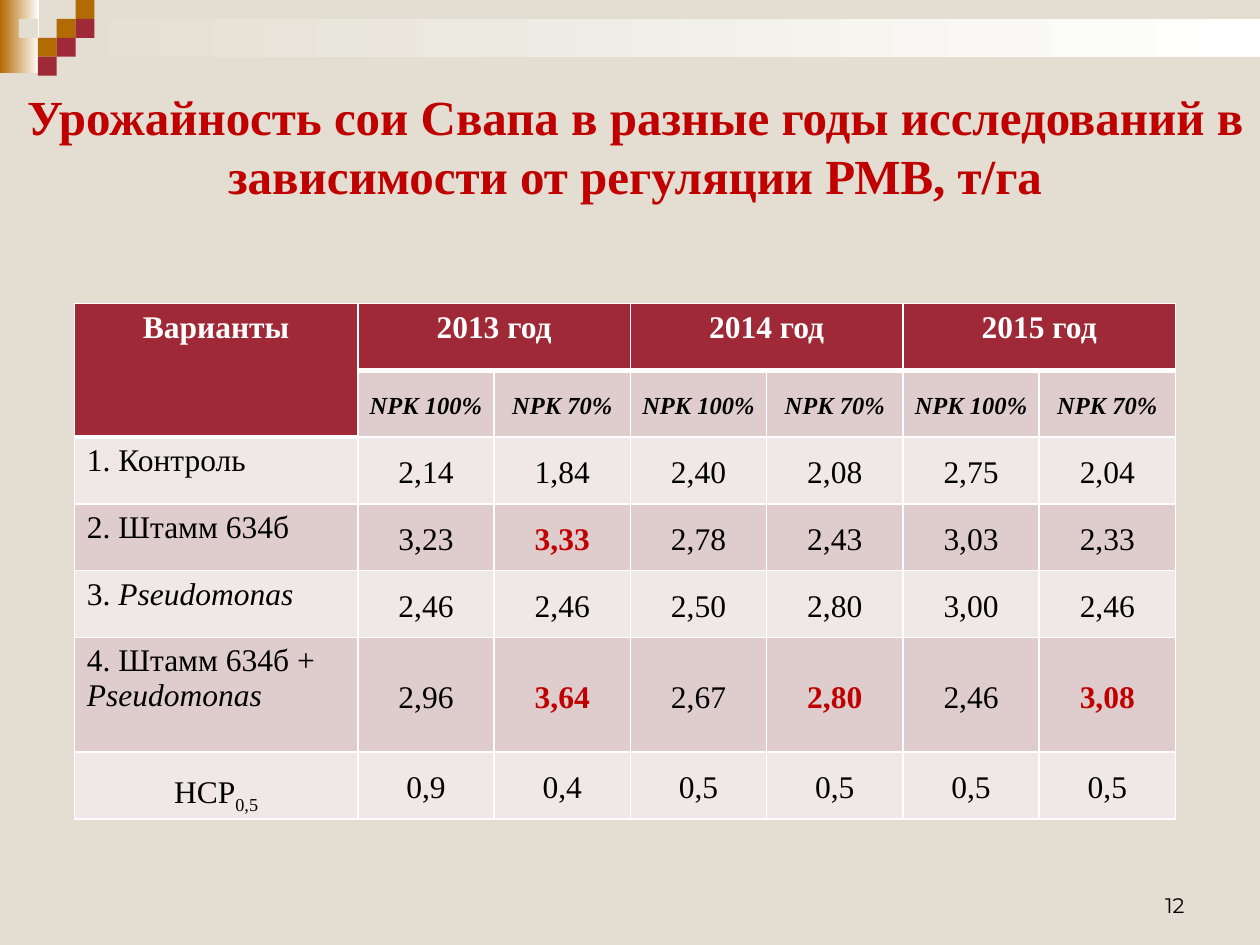
from lxml.etree import SubElement
from pptx import Presentation
from pptx.dml.color import RGBColor
from pptx.enum.shapes import MSO_SHAPE
from pptx.enum.text import MSO_ANCHOR, PP_ALIGN
from pptx.oxml.ns import qn
from pptx.util import Inches, Pt

COLORS = {
    "sand": "E3DED1", "white": "FFFFFF", "black": "000000", "ochre": "B26B02",
    "wine": "9F2936", "red": "C00000", "band_dark": "DFCDCE", "band_light": "F0E8E8",
}
SERIF = "Times New Roman"
BODY = {"name": SERIF, "size": 18, "color": "black", "bold": False, "italic": False}
HEADER = {**BODY, "color": "white", "bold": True}
SUBHEADER = {**BODY, "size": 14, "bold": True, "italic": True}
LATIN = {**BODY, "italic": True}
BEST = {**BODY, "color": "red", "bold": True}
TITLE = {**BEST, "size": 28}
NUMBER = {**BODY, "name": "Montserrat", "size": 12}

YEARS = ["2013 год", "2014 год", "2015 год"]
DOSES = ["NРK 100%", "NРK 70%"]
# Each label is a list of paragraphs, each paragraph a list of (text, format) spans.
LABELS = [
    [[("1. Контроль", BODY)]],
    [[("2. Штамм 634б", BODY)]],
    [[("3. ", BODY), ("Pseudomonas", LATIN)]],
    [[("4. Штамм 634б +", BODY)], [("Pseudomonas", LATIN)]],
    [[("НСР", BODY), ("0,5", {**BODY, "baseline": -25000})]],
]
YIELDS = [
    ["2,14", "1,84", "2,40", "2,08", "2,75", "2,04"],
    ["3,23", "3,33", "2,78", "2,43", "3,03", "2,33"],
    ["2,46", "2,46", "2,50", "2,80", "3,00", "2,46"],
    ["2,96", "3,64", "2,67", "2,80", "2,46", "3,08"],
    ["0,9", "0,4", "0,5", "0,5", "0,5", "0,5"],
]
BEST_CELLS = {(1, 1), (3, 1), (3, 3), (3, 5)}


def rgb(name):
    return RGBColor.from_string(COLORS[name])


def format_span(span, values):
    for key, value in values.items():
        if key == "color":
            span.font.color.rgb = rgb(value)
        elif key == "baseline":
            span._r.get_or_add_rPr().set("baseline", str(value))
        else:
            setattr(span.font, key, Pt(value) if key == "size" else value)


def write(frame, paragraphs, align=PP_ALIGN.LEFT, spacing=None):
    for index, spans in enumerate(paragraphs):
        para = frame.add_paragraph() if index else frame.paragraphs[0]
        para.alignment = align
        para.line_spacing = spacing
        for text, values in spans:
            span = para.add_run()
            span.text = text
            format_span(span, values)


def add_text(page, left, top, width, height, text, values, align, anchor):
    box = page.shapes.add_textbox(Inches(left), Inches(top), Inches(width), Inches(height))
    box.text_frame.word_wrap = True
    box.text_frame.vertical_anchor = anchor
    write(box.text_frame, [[(text, values)]], align)


def add_block(page, left, top, width, height, *names):
    """Borderless rectangle; two colour names give a left-to-right gradient."""
    block = page.shapes.add_shape(
        MSO_SHAPE.RECTANGLE, Inches(left), Inches(top), Inches(width), Inches(height))
    block.shadow.inherit = False
    block.line.fill.background()
    if len(names) == 1:
        block.fill.solid()
        block.fill.fore_color.rgb = rgb(names[0])
        return
    block.fill.gradient()
    block.fill.gradient_angle = 0
    for stop, name, position in zip(block.fill.gradient_stops, names, (0, 1)):
        stop.color.rgb = rgb(name)
        stop.position = position


def add_ornament(page, left, top, width):
    unit = 0.15
    add_block(page, left, top, 0.31, 0.58, "ochre", "white")
    add_block(page, left + 3 * unit, top + unit, width - 3 * unit, 2 * unit, "sand", "white")
    squares = [(3, 1, "ochre"), (4, 0, "ochre"), (4, 1, "wine"), (2, 2, "ochre"),
               (1, 1, "sand"), (3, 2, "wine"), (2, 3, "wine")]
    for column, row, name in squares:
        add_block(page, left + column * unit, top + row * unit, unit, unit, name)


def style_cell(cell, fill, bottom=1):
    properties = cell._tc.get_or_add_tcPr()
    for side, points in (("L", 1), ("R", 1), ("T", 1), ("B", bottom)):
        line = SubElement(properties, qn(f"a:ln{side}"), w=str(Pt(points)))
        color = SubElement(SubElement(line, qn("a:solidFill")), qn("a:srgbClr"))
        color.set("val", COLORS["white"])
    cell.fill.solid()
    cell.fill.fore_color.rgb = rgb(fill)


def write_centred(cell, spans, spacing=1.15):
    cell.vertical_anchor = MSO_ANCHOR.MIDDLE
    cell.margin_left = cell.margin_right = Inches(0.07)
    cell.margin_top = cell.margin_bottom = 0
    write(cell.text_frame, [spans], PP_ALIGN.CENTER, spacing)


def add_yield_table(page, left, top, width):
    heights = [0.53] * 5 + [0.91, 0.53]
    label_width = 2.25
    columns = len(YEARS) * len(DOSES)
    table = page.shapes.add_table(
        len(heights), columns + 1, Inches(left), Inches(top),
        Inches(width), Inches(sum(heights))).table
    table.first_row = table.horz_banding = False
    for row, height in zip(table.rows, heights):
        row.height = Inches(height)
    for index, column in enumerate(table.columns):
        column.width = Inches((width - label_width) / columns if index else label_width)

    for row in range(len(heights)):
        for column in range(columns + 1):
            if row == 0 or (row == 1 and column == 0):
                style_cell(table.cell(row, column), "wine", bottom=3)
            else:
                style_cell(table.cell(row, column), "band_dark" if row % 2 else "band_light")

    corner = table.cell(0, 0)
    corner.merge(table.cell(1, 0))
    write(corner.text_frame, [[("Варианты", HEADER)]], PP_ALIGN.CENTER)
    for index, year in enumerate(YEARS):
        first = 1 + index * len(DOSES)
        head = table.cell(0, first)
        head.merge(table.cell(0, first + len(DOSES) - 1))
        write(head.text_frame, [[(year, HEADER)]], PP_ALIGN.CENTER)
        for offset, dose in enumerate(DOSES):
            write_centred(table.cell(1, first + offset), [(dose, SUBHEADER)])

    for row, (label, values) in enumerate(zip(LABELS, YIELDS)):
        label_cell = table.cell(row + 2, 0)
        if label is LABELS[-1]:
            write_centred(label_cell, label[0], 1.5)
        else:
            write(label_cell.text_frame, label)
        for column, value in enumerate(values):
            values_format = BEST if (row, column) in BEST_CELLS else BODY
            write_centred(table.cell(row + 2, column + 1), [(value, values_format)])


def main():
    deck = Presentation()
    deck.slide_width, deck.slide_height = Inches(10), Inches(7.5)
    page = deck.slides.add_slide(deck.slide_layouts[6])
    page.background.fill.solid()
    page.background.fill.fore_color.rgb = rgb("sand")
    add_ornament(page, 0, 0, 10)
    add_text(page, 7.17, 6.83, 2.33, 0.5, "12", NUMBER, PP_ALIGN.RIGHT, MSO_ANCHOR.BOTTOM)
    add_yield_table(page, 0.59, 2.41, 8.74)
    add_text(page, 0.11, 0.64, 9.86, 1.04,
             "Урожайность сои Свапа в разные годы исследований в зависимости от регуляции РМВ, т/га",
             TITLE, PP_ALIGN.CENTER, MSO_ANCHOR.TOP)
    deck.save("out.pptx")


if __name__ == "__main__":
    main()
